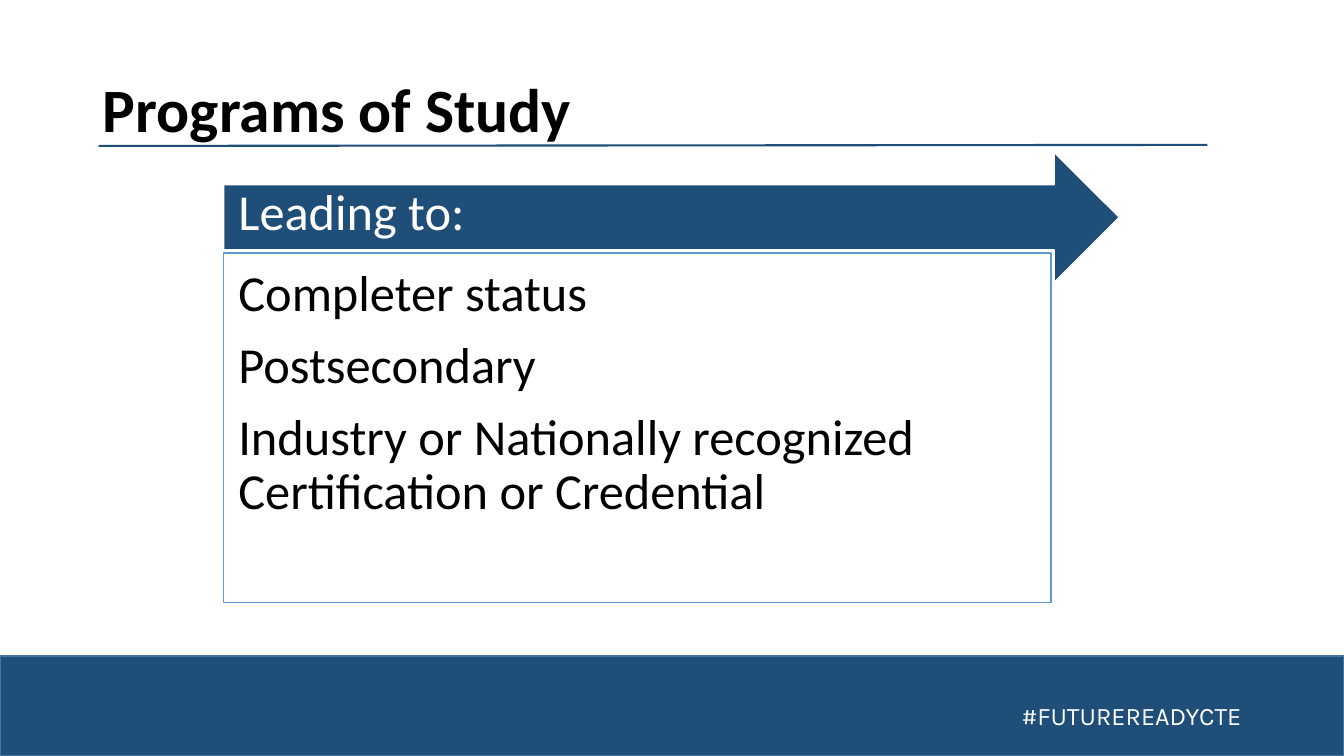
from dataclasses import dataclass, field
from typing import Any

import pptx
import pptx.dml.color
import pptx.enum.shapes
import pptx.enum.text
import pptx.oxml
import pptx.oxml.ns
import pptx.util

PX = 9525
NAVY, WHITE, BLACK = "1F4E79", "FFFFFF", "000000"
SHAPE = pptx.enum.shapes.MSO_SHAPE
ANCHOR = pptx.enum.text.MSO_ANCHOR
BODY_SPACING = {"line_spacing": 0.9, "space_after": pptx.util.Pt(12.6)}


@dataclass(frozen=True)
class Block:
    box: tuple[int, int, int, int]
    lines: tuple[str, ...] = ()
    preset: Any = None
    fill: str = WHITE
    outline: str = WHITE
    color: str = BLACK
    insets: tuple[int, int, int, int] = (10, 5, 10, 5)
    frame: dict[str, Any] = field(default_factory=dict)
    spacing: dict[str, Any] = field(default_factory=dict)
    font: dict[str, Any] = field(default_factory=dict)


def px(length: int) -> int:
    return pptx.util.Emu(length * PX)


def rgb(value: str) -> pptx.dml.color.RGBColor:
    return pptx.dml.color.RGBColor.from_string(value)


def apply(target: Any, values: dict[str, Any]) -> None:
    for name, value in values.items():
        setattr(target, name, value)


def font_values(size: int, name: str = "Calibri", bold: bool = False) -> dict[str, Any]:
    return {"name": name, "size": pptx.util.Pt(size), "bold": bold}


def draw_block(slide: Any, block: Block) -> None:
    place = [px(length) for length in block.box]
    if block.preset is None:
        shape = slide.shapes.add_textbox(*place)
    else:
        shape = slide.shapes.add_shape(block.preset, *place)
        shape.shadow.inherit = False
        shape.fill.solid()
        shape.fill.fore_color.rgb = rgb(block.fill)
        shape.line.color.rgb = rgb(block.outline)
        shape.line.width = pptx.util.Pt(1)

    frame = shape.text_frame
    sides = ("margin_left", "margin_top", "margin_right", "margin_bottom")
    margins = dict(zip(sides, map(px, block.insets)))
    apply(frame, {"word_wrap": True, **margins, **block.frame})
    for index, line in enumerate(block.lines):
        paragraph = frame.add_paragraph() if index else frame.paragraphs[0]
        paragraph.text = line
        apply(paragraph, {"alignment": pptx.enum.text.PP_ALIGN.LEFT, **block.spacing})
        apply(paragraph.font, block.font)
        paragraph.font.color.rgb = rgb(block.color)


def draw_rule(slide: Any, start: tuple[int, int], end: tuple[int, int]) -> None:
    rule = slide.shapes.add_connector(
        pptx.enum.shapes.MSO_CONNECTOR.STRAIGHT, *map(px, start + end)
    )
    rule.line.color.rgb = rgb(NAVY)
    rule.line.width = pptx.util.Pt(1.5)
    properties = rule._element.spPr
    properties.append(properties.makeelement(pptx.oxml.ns.qn("a:effectLst"), {}))


FOOTER = Block(
    (0, 625, 1280, 95), preset=SHAPE.RECTANGLE, fill=NAVY, outline="43739E"
)
HASHTAG = Block(
    (963, 662, 231, 38),
    ("#FUTUREREADYCTE",),
    color=WHITE,
    insets=(10, 5, 0, 5),
    frame={
        "word_wrap": False,
        "auto_size": pptx.enum.text.MSO_AUTO_SIZE.SHAPE_TO_FIT_TEXT,
    },
    font=font_values(18, "Karla"),
)
TITLE = Block(
    (88, 38, 1104, 139),
    ("Programs of Study",),
    frame={"vertical_anchor": ANCHOR.MIDDLE},
    spacing={"line_spacing": 0.9},
    font=font_values(44, bold=True),
)
LEADING_ARROW = Block(
    (213, 145, 853, 124),
    ("Leading to:",),
    preset=SHAPE.RIGHT_ARROW,
    fill=NAVY,
    color=WHITE,
    insets=(14, 14, 27, 20),
    frame={"vertical_anchor": ANCHOR.MIDDLE},
    spacing=BODY_SPACING,
    font=font_values(36),
)
OUTCOMES = Block(
    (213, 241, 788, 333),
    (
        "Completer status",
        "Postsecondary",
        "Industry or Nationally recognized Certification or Credential",
    ),
    preset=SHAPE.RECTANGLE,
    outline="5B9BD5",
    insets=(14, 14, 14, 14),
    frame={"vertical_anchor": ANCHOR.TOP},
    spacing=BODY_SPACING,
    font=font_values(36),
)


def main() -> None:
    deck = pptx.Presentation()
    apply(deck, {"slide_width": px(1280), "slide_height": px(720)})
    slide = deck.slides.add_slide(deck.slide_layouts[6])
    for block in (FOOTER, HASHTAG, TITLE):
        draw_block(slide, block)
    draw_rule(slide, (94, 139), (1150, 138))
    for block in (LEADING_ARROW, OUTCOMES):
        draw_block(slide, block)
    deck.save("out.pptx")


if __name__ == "__main__":
    main()
